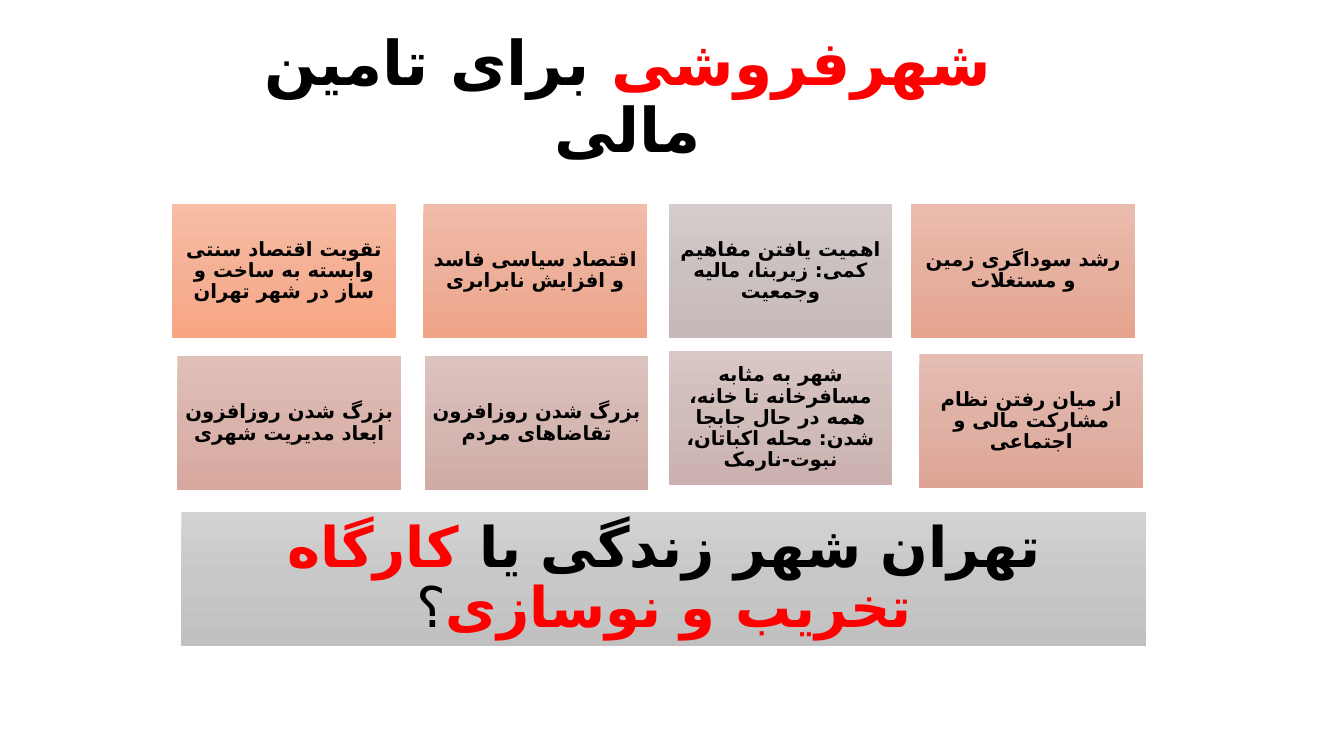
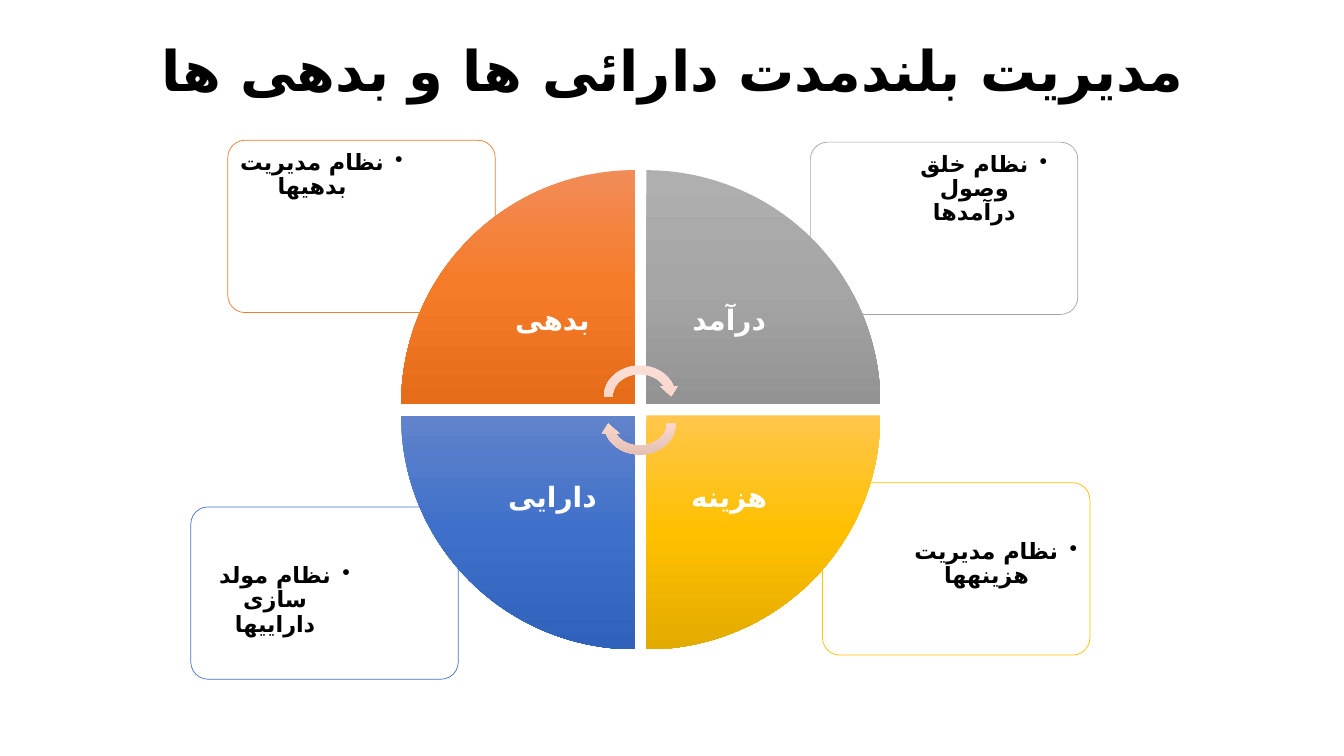
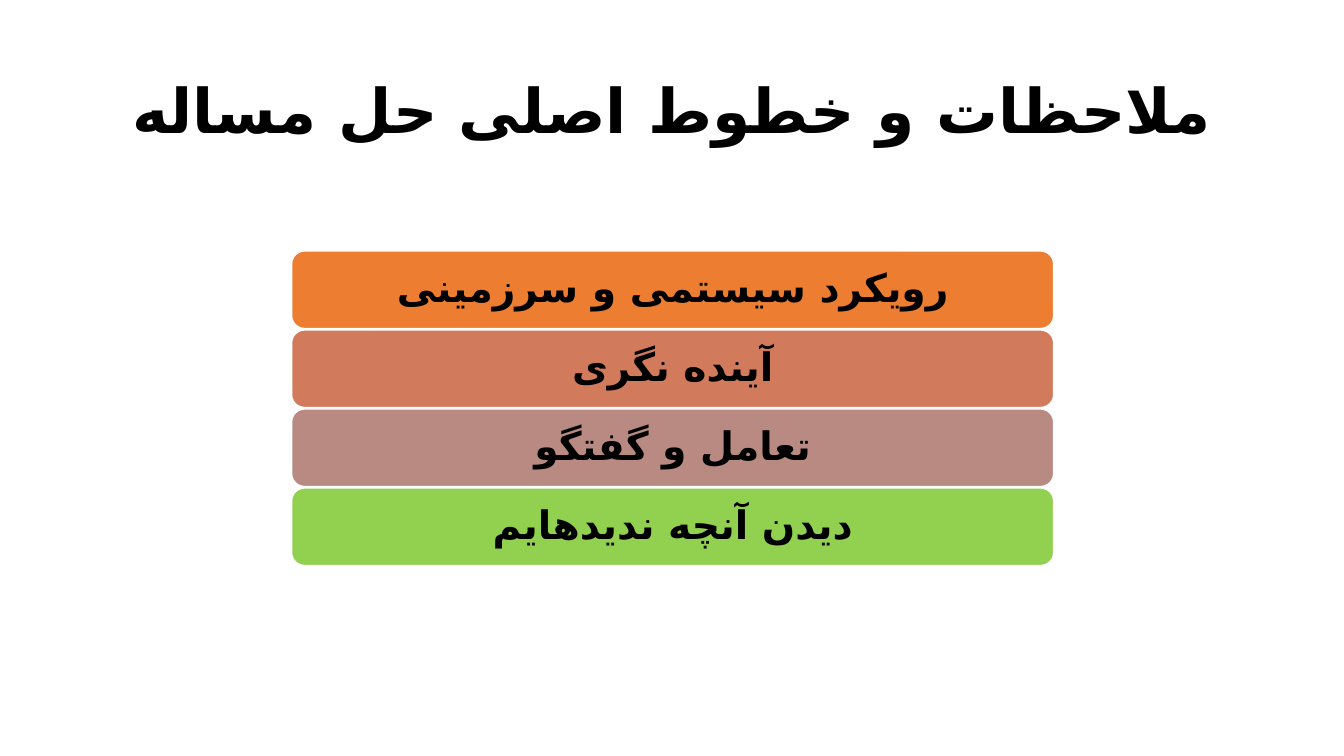
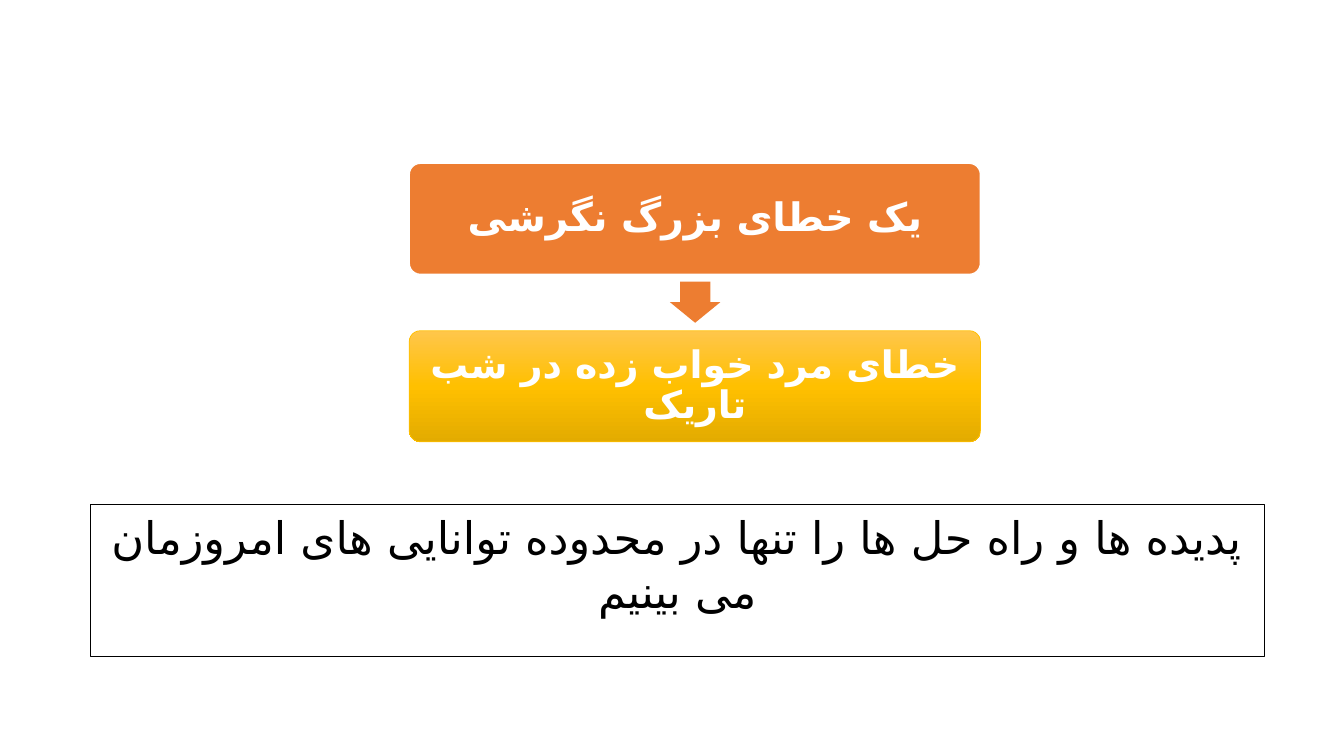
import pptx
import pptx.dml.color
import pptx.enum.shapes
import pptx.enum.text
import pptx.oxml
import pptx.oxml.ns
import pptx.util

hue = pptx.dml.color.RGBColor.from_string
kinds = pptx.enum.shapes.MSO_SHAPE
anchors = pptx.enum.text.MSO_ANCHOR

black, white, red = "000000", "FFFFFF", "FF0000"
orange, grey, gold, blue = "ED7D31", "A5A5A5", "FFC000", "4472C4"
warm = ["F18C57", "F67B28", "E56C19"]
ash = ["AFAFAF", "A5A5A5", "939393"]
sun = ["FFC64B", "FFC000", "E3AB00"]
sea = ["6183CB", "3E70CA", "3062BB"]
blush = ["FAE0D8", "FAD6CB", "E2BCB1"]
script = "DejaVu Sans"

deck = pptx.Presentation()
deck.slide_width = pptx.util.Inches(13.33)
deck.slide_height = pptx.util.Inches(7.5)
col = deck.slide_width / 100
row = deck.slide_height / 100


def write(shape, text, size, color=black, bold=True, font="Calibri", rtl=True,
          anchor=anchors.MIDDLE, pads=(0.1, 0.05, 0.1, 0.05), space=0.9, bullet=None):
    frame = shape.text_frame
    frame.word_wrap = True
    frame.auto_size = pptx.enum.text.MSO_AUTO_SIZE.NONE
    frame.vertical_anchor = anchor
    (frame.margin_left, frame.margin_top, frame.margin_right,
     frame.margin_bottom) = [pptx.util.Inches(pad) for pad in pads]
    para = frame.paragraphs[0]
    para.alignment = pptx.enum.text.PP_ALIGN.CENTER
    para.line_spacing = space
    props = para._p.get_or_add_pPr()
    if rtl:
        props.set("rtl", "1")
    if bullet:
        props.set("marL", str(pptx.util.Inches(0.19)))
        props.set("indent", str(-pptx.util.Inches(0.19)))
        mark = pptx.oxml.parse_xml(f'<a:buChar {pptx.oxml.ns.nsdecls("a")} char="{bullet}"/>')
        props.append(mark)
    parts = [(text, color, bold)] if isinstance(text, str) else text
    for words, tint, heavy in parts:
        run = para.add_run()
        run.text = words
        run.font.size = pptx.util.Pt(size)
        run.font.bold = heavy
        run.font.color.rgb = hue(tint)
        run.font.name = font
        run.font._element.append(pptx.oxml.parse_xml(
            f'<a:cs {pptx.oxml.ns.nsdecls("a")} typeface="{script}"/>'))


def draw(slide, kind, x, y, wide, high, fill=None, line=None, thick=1, turn=0, adjust=()):
    shape = slide.shapes.add_shape(
        kind, round(x * col), round(y * row), round(wide * col), round(high * row))
    shape.shadow.inherit = False
    shape.rotation = turn
    for spot, value in enumerate(adjust):
        shape.adjustments[spot] = value
    if fill is None:
        shape.fill.background()
    elif isinstance(fill, str):
        shape.fill.solid()
        shape.fill.fore_color.rgb = hue(fill)
    else:
        stops = "".join(f'<a:gs pos="{spot * 50000}"><a:srgbClr val="{tint}"/></a:gs>'
                        for spot, tint in enumerate(fill))
        props = shape._element.spPr
        outline = props.find(pptx.oxml.ns.qn("a:prstGeom"))
        outline.addnext(pptx.oxml.parse_xml(
            f'<a:gradFill {pptx.oxml.ns.nsdecls("a")} rotWithShape="0"><a:gsLst>{stops}'
            '</a:gsLst><a:lin ang="5400000" scaled="0"/></a:gradFill>'))
    if line:
        shape.line.color.rgb = hue(line)
        shape.line.width = pptx.util.Pt(thick)
    else:
        shape.line.fill.background()
    return shape


heads = [
    ([("شهرفروشی", red, True), (" برای تامین مالی", black, True)], 44, 15.15, 8.95, 63.1, 8.25),
    ("مدیریت بلندمدت دارائی ها و بدهی ها", 40, 6.9, 0, 86.25, 19.35),
    ("ملاحظات و خطوط اصلی حل مساله", 44, 6.9, 5.3, 86.25, 19.35),
]
pages = []
for text, size, x, y, wide, high in heads:
    page = deck.slides.add_slide(deck.slide_layouts[5])
    title = page.shapes.title
    title.left, title.width = round(x * col), round(wide * col)
    title.top, title.height = round(y * row), round(high * row)
    write(title, text, size, rtl=False)
    pages.append(page)
sale, wealth, lines = pages

tiles = [
    (12.8, 26.95, ["F7BDA5", "F5B196", "F8A582"], "تقویت اقتصاد سنتی وابسته به ساخت و ساز در شهر تهران"),
    (31.5, 26.95, ["F1BCA9", "EDB09A", "EFA387"], "اقتصاد سیاسی فاسد و افزایش نابرابری"),
    (67.8, 26.95, ["EBBCAE", "E6B09F", "E6A38E"], "رشد سوداگری زمین و مستغلات"),
    (68.4, 46.8, ["E5BDB3", "E0B1A5", "DEA595"], "از میان رفتن نظام مشارکت مالی و اجتماعی"),
    (13.2, 47.1, ["E0C0B9", "DAB4AC", "D7A89E"], "بزرگ شدن روزافزون ابعاد مدیریت شهری"),
    (31.6, 47.1, ["DCC3BF", "D5B7B2", "D1ACA6"], "بزرگ شدن روزافزون تقاضاهای مردم"),
    (49.75, 46.4, ["D8C7C5", "D0BCB9", "CBB1AF"],
     "شهر به مثابه مسافرخانه تا خانه، همه در حال جابجا شدن: محله اکباتان، نبوت-نارمک"),
    (49.75, 26.95, ["D5CCCB", "CCC1C1", "C5B8B8"], "اهمیت یافتن مفاهیم کمی: زیربنا، مالیه وجمعیت"),
]
for spot, (x, y, fade, text) in enumerate(tiles):
    tile = draw(sale, kinds.RECTANGLE, x, y, 16.65, 17.75, fade)
    write(tile, text, 14, pads=[0.06] * 4, font="Calibri" if spot else script)
bar = draw(sale, kinds.RECTANGLE, 13.5, 67.75, 71.8, 17.75, ["D2D2D2", "C8C8C8", "C0C0C0"])
write(bar, [("تهران شهر زندگی یا ", black, True), ("کارگاه تخریب و نوسازی", red, True),
            ("؟", black, False)], 40, pads=[0.17] * 4)

cards = [
    (61.2, 63.85, gold, True, True, "نظام مدیریت هزینهها"),
    (14.2, 67.05, blue, False, True, "نظام مولد سازی داراییها"),
    (60.3, 18.8, grey, True, False, "نظام خلق وصول درآمدها"),
    (16.95, 18.55, orange, False, False, "نظام مدیریت بدهیها"),
]
for x, y, edge, right, low, text in cards:
    card = draw(wealth, kinds.ROUNDED_RECTANGLE, x, y, 19.9, 22.8, white, edge, 0.5, adjust=[0.1])
    left, top = (0.84 if right else 0.05), (0.52 if low else 0.06)
    write(card, text, 16, anchor=anchors.TOP, pads=(left, top, 0.89 - left, 0.06), bullet="•")

side, tall = 17.4, 30.95
wide, high = 12.3, 21.85
wedges = [(0, 0, warm, "بدهی"), (1, 0, ash, "درآمد"),
          (1, 1, sun, "هزینه"), (0, 1, sea, "دارایی")]
for spot, (across, down, fade, text) in enumerate(wedges):
    x = 29.85 + across * 18.25
    y = 22.5 + down * 32.45
    draw(wealth, kinds.PIE_WEDGE, x, y, side, tall, fade, turn=spot * 90)
    label = wealth.shapes.add_textbox(
        round((x + (1 - across) * (side - wide)) * col),
        round((y + (1 - down) * (tall - high)) * row),
        round(wide * col), round(high * row))
    write(label, text, 20, white, pads=[0.16] * 4)
for y, turn in [(47.75, 0), (51.35, 180)]:
    draw(wealth, kinds.CIRCULAR_ARROW, 44.6, y, 6, 9.35, blush, turn=turn)

bands = [(orange, "رویکرد سیستمی و سرزمینی"), ("D17B5C", "آینده نگری"),
         ("B98A82", "تعامل و گفتگو"), ("92D050", "دیدن آنچه ندیدهایم")]
for spot, (tint, text) in enumerate(bands):
    band = draw(lines, kinds.ROUNDED_RECTANGLE, 21.7, 33.2 + spot * 10.45, 56.7, 10.25, tint, white)
    write(band, text, 28, pads=[0.12] * 4)

fault = deck.slides.add_slide(deck.slide_layouts[6])
steps = [(21.6, orange, white, 1, 28, "یک خطای بزرگ نگرشی"),
         (43.75, sun, gold, 0.5, 27, "خطای مرد خواب زده در شب تاریک")]
for y, fill, edge, thick, size, text in steps:
    step = draw(fault, kinds.ROUNDED_RECTANGLE, 30.45, y, 42.5, 14.7, fill, edge, thick, adjust=[0.1])
    write(step, text, size, white, pads=[0.11] * 4)
draw(fault, kinds.DOWN_ARROW, 49.85, 37.25, 3.75, 5.45, orange, adjust=[0.6, 0.5])
note = draw(fault, kinds.RECTANGLE, 6.7, 66.8, 87.4, 20, line=black, thick=0.75)
write(note, "پدیده ها و راه حل ها را تنها در محدوده توانایی های امروزمان می بینیم", 32,
      bold=False, font="Arial", rtl=False, anchor=anchors.TOP, space=1.0)

deck.save("out.pptx")
